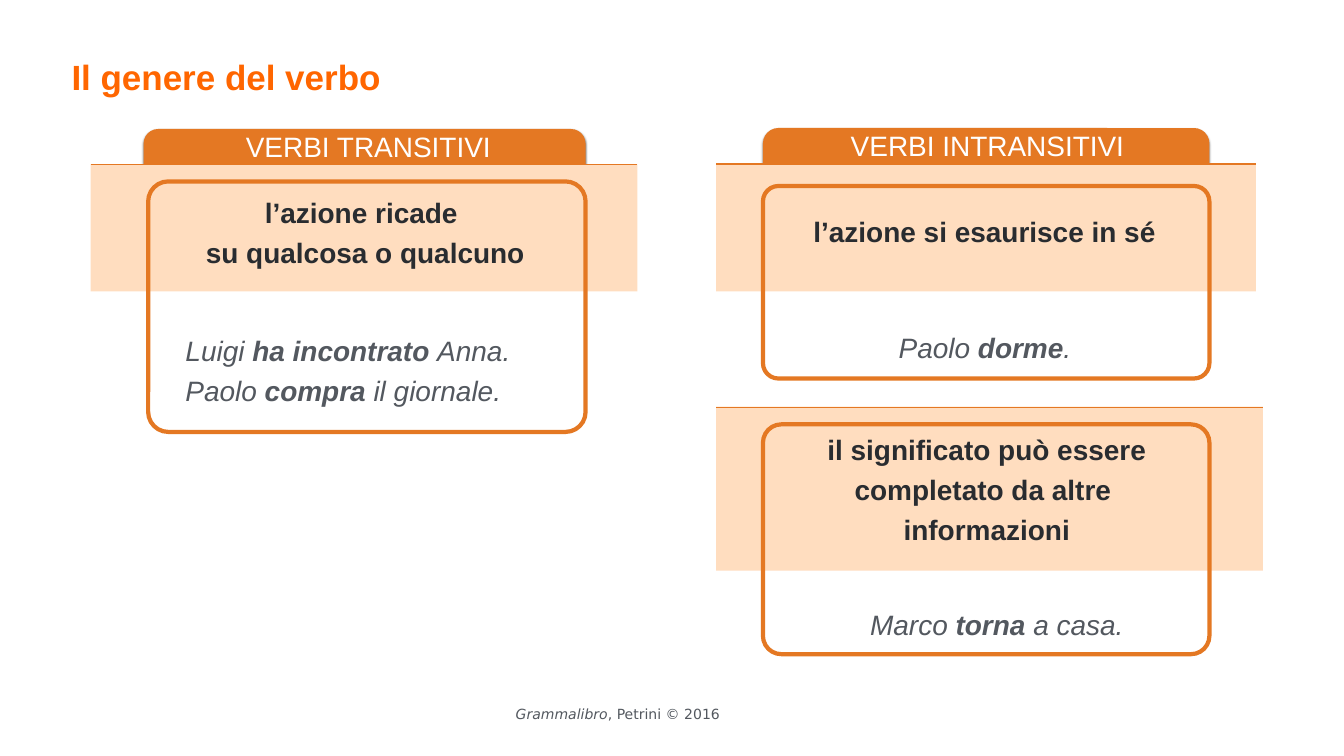
from lxml import etree
from pptx import Presentation
from pptx.dml.color import RGBColor
from pptx.enum.shapes import MSO_CONNECTOR, MSO_SHAPE
from pptx.enum.text import MSO_ANCHOR, MSO_AUTO_SIZE, PP_ALIGN
from pptx.oxml import parse_xml
from pptx.oxml.ns import nsdecls, qn
from pptx.util import Inches, Pt

COLORS = {
    "title": "FF6600",
    "accent": "E47823",
    "band": "FFDDBF",
    "heading": "FFFFFF",
    "definition": "292C30",
    "example": "53585F",
}
COLORS = {part: RGBColor.from_string(value) for part, value in COLORS.items()}
SHADOW = (
    f'<a:outerShdw {nsdecls("a")} blurRad="38100" dist="25400" dir="5400000" rotWithShape="0">'
    '<a:srgbClr val="000000"><a:alpha val="50000"/></a:srgbClr></a:outerShdw>'
)

prs = Presentation()
prs.slide_width, prs.slide_height = Inches(26.67), Inches(15)
slide = prs.slides.add_slide(prs.slide_layouts[5])
shapes = slide.shapes


def write(box, lines, color, size=40, font="Arial", align=PP_ALIGN.CENTER, spacing=1.2,
          bold=None, italic=None, inset=0.06, anchor=MSO_ANCHOR.MIDDLE, wrap=True):
    frame = box.text_frame
    frame.word_wrap = wrap
    frame.auto_size = MSO_AUTO_SIZE.NONE
    frame.vertical_anchor = anchor
    frame.margin_left = frame.margin_right = Inches(inset)
    frame.margin_top = frame.margin_bottom = Inches(min(inset, 0.06))
    for number, line in enumerate(lines):
        paragraph = frame.add_paragraph() if number else frame.paragraphs[0]
        paragraph.alignment = align
        paragraph.line_spacing = spacing
        paragraph.space_before = Pt(0)
        paragraph.font.name = font
        paragraph.font.size = Pt(size)
        paragraph.font.color.rgb = COLORS[color]
        paragraph.font.bold = bold
        paragraph.font.italic = italic
        for text, emphasis in line:
            run = paragraph.add_run()
            run.text = text
            for style in emphasis:
                setattr(run.font, style, True)


def add_block(preset, place, fill=None, line_width=None, radius=None):
    block = shapes.add_shape(preset, *map(Inches, place))
    block.shadow.inherit = False
    if radius:
        block.adjustments[0] = radius
    if fill:
        block.fill.solid()
        block.fill.fore_color.rgb = COLORS[fill]
    else:
        block.fill.background()
    if line_width:
        block.line.color.rgb = COLORS["accent"]
        block.line.width = Pt(line_width)
    else:
        block.line.fill.background()
    return block


title = shapes.title
title.left, title.top, title.width, title.height = map(Inches, (1.36, 0.97, 10.26, 1.02))
write(title, [[("Il genere del verbo", ())]], "title", size=50, align=PP_ALIGN.LEFT,
      spacing=1.1, bold=True)

tabs = [(2.85, 2.56, 8.77, 2.5), (15.14, 2.54, 8.86, 2.66)]
for place in tabs:
    tab = add_block(MSO_SHAPE.ROUNDED_RECTANGLE, place, fill="accent", radius=0.115)
    tab._element.spPr.find(qn("a:effectLst")).append(parse_xml(SHADOW))

bands = [(1.8, 3.26, 10.85, 2.52), (14.21, 3.24, 10.71, 2.54), (14.21, 8.07, 10.85, 3.25)]
for left, top, width, height in bands:
    add_block(MSO_SHAPE.RECTANGLE, (left, top, width, height), fill="band")
    rule = shapes.add_connector(
        MSO_CONNECTOR.STRAIGHT,
        Inches(left), Inches(top + 0.01), Inches(left + width), Inches(top + 0.01),
    )
    rule.line.color.rgb = COLORS["accent"]
    rule.line.width = Pt(2)
    etree.SubElement(rule._element.spPr, qn("a:effectLst"))

headings = [
    ((3.73, 2.44, 7.16, 0.83), "VERBI TRANSITIVI"),
    ((15.75, 2.43, 7.69, 0.83), "VERBI INTRANSITIVI"),
]
for place, heading in headings:
    write(shapes.add_textbox(*map(Inches, place)), [[(heading, ())]], "heading",
          spacing=1.1, inset=0.1, anchor=MSO_ANCHOR.TOP)

definitions = [
    ((2.29, 3.69, 9.91, 1.71), ["l’azione ricade ", "su qualcosa o qualcuno"]),
    ((14.58, 4.07, 9.91, 0.9), ["l’azione si esaurisce in sé"]),
    ((15.16, 8.39, 8.84, 2.51),
     ["il significato può essere", "completato da altre ", "informazioni"]),
]
for place, lines in definitions:
    write(shapes.add_textbox(*map(Inches, place)), [[(line, ())] for line in lines],
          "definition", bold=True)

verb = ("bold",)
examples = [
    ((3.62, 6.43, 7.35, 1.71), PP_ALIGN.LEFT, [
        [("Luigi ", ()), ("ha incontrato ", verb), ("Anna.", ())],
        [("Paolo ", ()), ("compra", verb), (" il giornale.", ())],
    ]),
    ((17.23, 6.38, 4.63, 0.9), PP_ALIGN.CENTER,
     [[("Paolo ", ()), ("dorme", verb), (".", ())]]),
    ((16.74, 11.87, 6.08, 0.9), PP_ALIGN.CENTER,
     [[("Marco ", ()), ("torna", verb), (" a casa.", ())]]),
]
for place, align, lines in examples:
    write(shapes.add_textbox(*map(Inches, place)), lines, "example", align=align, italic=True)

frames = [(2.94, 3.6, 8.68, 4.97), (15.14, 3.69, 8.86, 3.82), (15.14, 8.42, 8.86, 4.56)]
for place in frames:
    add_block(MSO_SHAPE.ROUNDED_RECTANGLE, place, line_width=6, radius=0.08)

credit = shapes.add_textbox(*map(Inches, (10.1, 14.03, 4.32, 0.36)))
write(credit, [[("Grammalibro", ("italic",)), (", Petrini © 2016", ())]], "example",
      size=20, font="DejaVu Sans", spacing=0.7, wrap=False)

prs.save("out.pptx")
